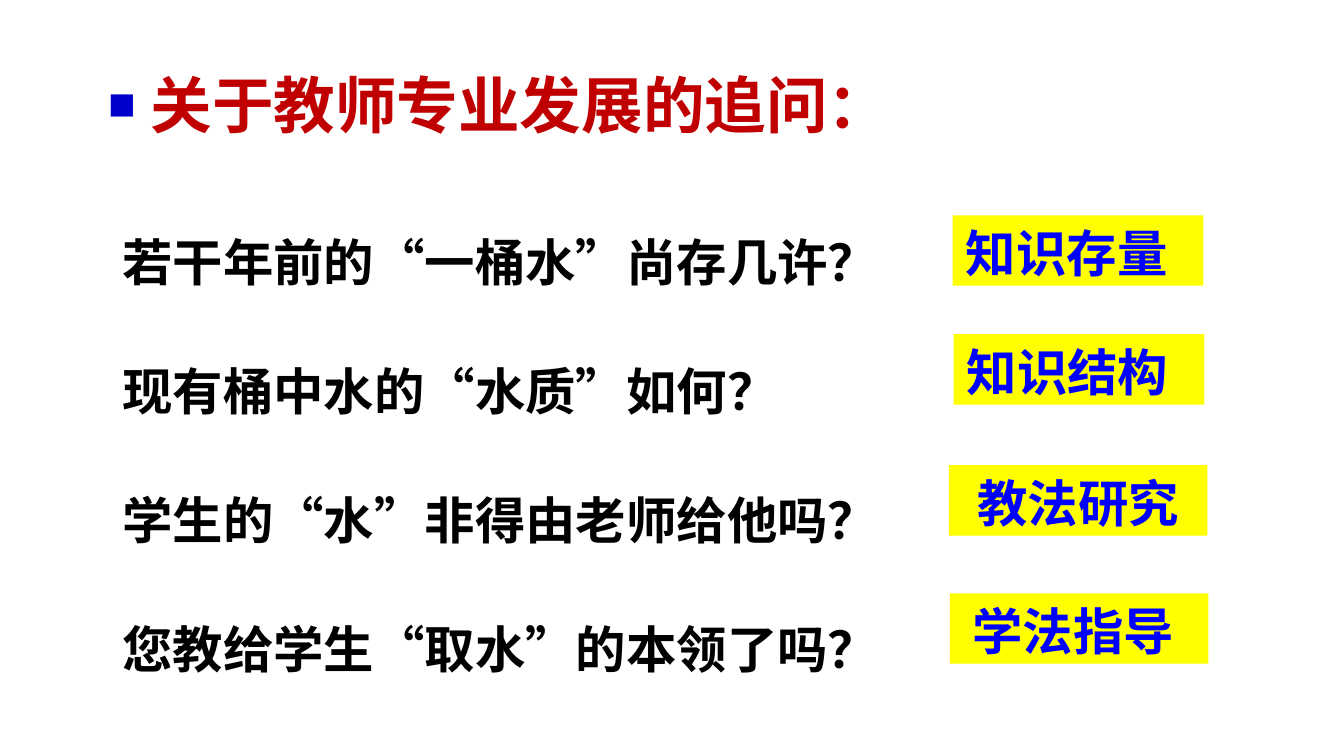
import pptx
import pptx.util
import pptx.oxml.ns
import pptx.dml.color
import pptx.enum.text
import pptx.enum.shapes
import lxml.etree

Cm, Pt = pptx.util.Cm, pptx.util.Pt
Align = pptx.enum.text.PP_ALIGN


class Theme:
    font = "Noto Sans CJK SC"
    title_size, text_size = 88, 72
    red, black, blue, yellow = "C00000", "000000", "0000FF", "FFFF00"
    mark = "0000CC"


def color(code):
    return pptx.dml.color.RGBColor.from_string(code)


def add_node(parent, tag, **attrs):
    return lxml.etree.SubElement(parent, pptx.oxml.ns.qn(tag), attrs)


class Page:
    def __init__(self, slide, theme):
        self.slide, self.theme = slide, theme

    def style(self, frame, size, code, align, left=0.58, right=0.58):
        frame.word_wrap = True
        frame.auto_size = pptx.enum.text.MSO_AUTO_SIZE.NONE
        frame.vertical_anchor = pptx.enum.text.MSO_ANCHOR.TOP
        frame.margin_left, frame.margin_right = Cm(left), Cm(right)
        frame.margin_top = frame.margin_bottom = Cm(0.33)
        for para in frame.paragraphs:
            para.alignment = align
            for run in para.runs:
                font = run.font
                font.name, font.size, font.bold = self.theme.font, Pt(size), True
                font.color.rgb = color(code)
                props = run._r.get_or_add_rPr()
                props.set("lang", "zh-CN")
                add_node(props, "a:ea", typeface=self.theme.font)

    def title(self, text, left, top, width, height):
        shape = self.slide.shapes.title
        shape.left, shape.top = Cm(left), Cm(top)
        shape.width, shape.height = Cm(width), Cm(height)
        frame = shape.text_frame
        frame.text = text
        self.style(frame, self.theme.title_size, self.theme.red, Align.CENTER)
        para = frame.paragraphs[0]
        para.line_spacing = 1.0
        # Square bullet
        props = para._p.get_or_add_pPr()
        fill = add_node(props, "a:buClr")
        add_node(fill, "a:srgbClr", val=self.theme.mark)
        add_node(props, "a:buSzPct", val="45000")
        add_node(props, "a:buFont", typeface=self.theme.font)
        add_node(props, "a:buChar", char="■")

    def body(self, lines, left, top, width, height):
        box = self.slide.shapes.add_textbox(Cm(left), Cm(top), Cm(width), Cm(height))
        frame = box.text_frame
        frame.text = "\n".join(lines)
        self.style(frame, self.theme.text_size, self.theme.black, Align.LEFT)
        for para in frame.paragraphs:
            para.line_spacing = 2.0
            para.space_before = Pt(11.7)

    def label(self, text, left, top, width, height, right):
        shape = self.slide.shapes.add_shape(
            pptx.enum.shapes.MSO_SHAPE.RECTANGLE,
            Cm(left), Cm(top), Cm(width), Cm(height))
        shape.shadow.inherit = False
        shape.fill.solid()
        shape.fill.fore_color.rgb = color(self.theme.yellow)
        shape.line.fill.background()
        shape.text_frame.text = text
        self.style(shape.text_frame, self.theme.text_size, self.theme.blue,
                   Align.CENTER, left=0, right=right)


def main():
    deck = pptx.Presentation()
    deck.slide_width, deck.slide_height = Cm(67.74), Cm(38.1)
    page = Page(deck.slides.add_slide(deck.slide_layouts[5]), Theme())

    # Heading
    page.title(" 关于教师专业发展的追问：", -5.33, 3.05, 60.96, 6.35)

    # Questions
    page.body(["若干年前的“一桶水”尚存几许？",
               "现有桶中水的“水质”如何？",
               "学生的“水”非得由老师给他吗？",
               "您教给学生“取水”的本领了吗？"], 5.59, 8.26, 60.27, 25.17)

    # Answer labels: text, left, top, width, right inset
    labels = [("知识存量", 48.01, 10.85, 12.65, 1.15),
              ("知识结构", 48.06, 16.84, 12.65, 1.15),
              ("教法研究", 47.83, 23.44, 13.03, 0),
              ("学法指导", 47.88, 29.9, 13.03, 0.6)]
    for text, left, top, width, right in labels:
        page.label(text, left, top, width, 3.55, right)

    deck.save("out.pptx")


if __name__ == "__main__":
    main()
